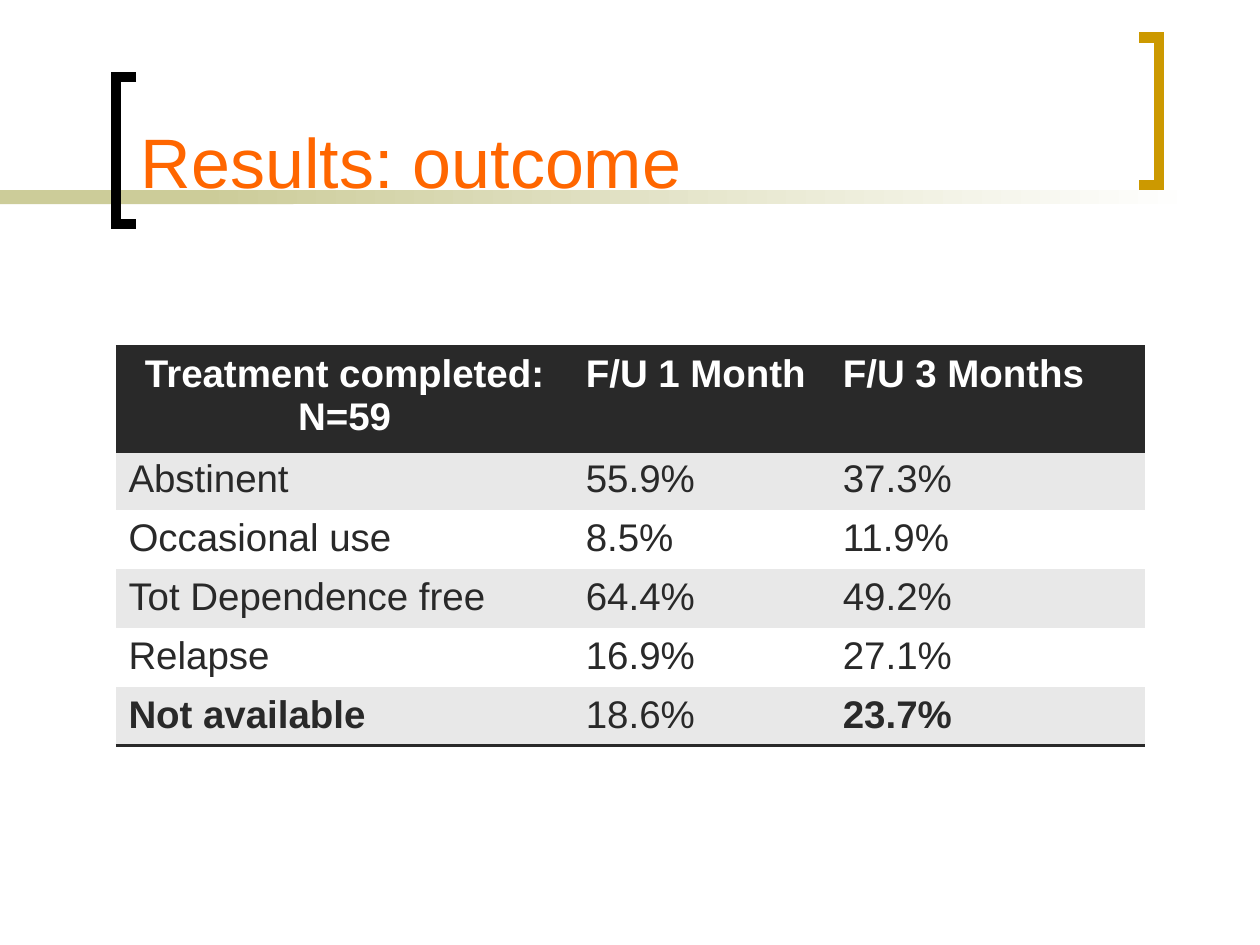
import pptx
import pptx.util
import pptx.dml.color
import pptx.enum.shapes
import pptx.enum.text
import pptx.oxml
import pptx.oxml.ns

Inches = pptx.util.Inches
HUES = {
    "dark": "292929", "pale": "E8E8E8", "white": "FFFFFF", "black": "000000",
    "gold": "CC9900", "sage": "CCCC99", "orange": "FF6600",
}
ROWS = [
    ("Treatment completed: N=59", "F/U 1 Month", "F/U 3 Months"),
    ("Abstinent", "55.9%", "37.3%"),
    ("Occasional use", "8.5%", "11.9%"),
    ("Tot Dependence free", "64.4%", "49.2%"),
    ("Relapse", "16.9%", "27.1%"),
    ("Not available", "18.6%", "23.7%"),
]
STRONG = {"Not available", "23.7%"}
PLAIN = "{2D5ABB26-0587-4C30-8999-92F81FD0307C}"


def rgb(hue):
    return pptx.dml.color.RGBColor.from_string(HUES[hue])


class Deck:
    """Hold the style and the current slide, and draw each kind of element."""

    def __init__(self, wide, high):
        self.show = pptx.Presentation()
        self.show.slide_width, self.show.slide_height = Inches(wide), Inches(high)
        self.slide = self.show.slides.add_slide(self.show.slide_layouts[6])
        self.shapes = self.slide.shapes

    def label(self, frame, text, hue, **form):
        run = frame.paragraphs[0].add_run()
        run.text = text
        run.font.color.rgb = rgb(hue)
        for name, value in {"name": "Arial", **form}.items():
            setattr(run.font, name, value)

    def bar(self, box, hue, fade=None):
        kind = pptx.enum.shapes.MSO_SHAPE.RECTANGLE
        bar = self.shapes.add_shape(kind, *map(Inches, box))
        bar.shadow.inherit = False
        bar.line.fill.background()
        if fade:
            bar.fill.gradient()
            bar.fill.gradient_angle = 0
            for stop, tone in zip(bar.fill.gradient_stops, (hue, fade)):
                stop.color.rgb = rgb(tone)
        else:
            bar.fill.solid()
            bar.fill.fore_color.rgb = rgb(hue)

    def bracket(self, tip, back, top, hue, high=1.17):
        points = [(tip, top), (back, top), (back, top + high), (tip, top + high)]
        points = [(Inches(x), Inches(y)) for x, y in points]
        pen = self.shapes.build_freeform(*points[0])
        pen.add_line_segments(points[1:], close=False)
        mark = pen.convert_to_shape()
        mark.shadow.inherit = False
        mark.fill.background()
        mark.line.color.rgb = rgb(hue)
        mark.line.width = pptx.util.Pt(6)
        join = pptx.oxml.parse_xml(
            f'<a:miter {pptx.oxml.ns.nsdecls("a")} lim="800000"/>')
        mark.line._get_or_add_ln().append(join)

    def title(self, box, text):
        frame = self.shapes.add_textbox(*map(Inches, box)).text_frame
        frame.word_wrap = True
        frame.vertical_anchor = pptx.enum.text.MSO_ANCHOR.BOTTOM
        self.label(frame, text, "orange", size=pptx.util.Pt(40))

    def edge(self, cell, sides):
        for spot, side in enumerate(sides):
            line = pptx.oxml.parse_xml(
                f'<a:ln{side} {pptx.oxml.ns.nsdecls("a")} w="{pptx.util.Pt(2)}">'
                f'<a:solidFill><a:srgbClr val="{HUES["dark"]}"/></a:solidFill>'
                f'</a:ln{side}>')
            cell._tc.get_or_add_tcPr().insert(spot, line)

    def table(self, left, top, wides, high, rows):
        frame = self.shapes.add_table(
            len(rows), len(wides), Inches(left), Inches(top),
            Inches(sum(wides)), Inches(high * len(rows)))
        grid = frame.table
        grid._tbl.tblPr.find(pptx.oxml.ns.qn("a:tableStyleId")).text = PLAIN
        for col, wide in zip(grid.columns, wides):
            col.width = Inches(wide)
        edges = {0: "TB", len(rows) - 1: "B"}
        for r, row in enumerate(rows):
            grid.rows[r].height = Inches(high)
            for c, text in enumerate(row):
                cell = grid.cell(r, c)
                head = r == 0
                cell.fill.solid()
                tone = "dark" if head else ("white", "pale")[r % 2]
                cell.fill.fore_color.rgb = rgb(tone)
                self.edge(cell, edges.get(r, ""))
                self.label(cell.text_frame, text, "white" if head else "dark",
                           size=pptx.util.Pt(22), bold=head or text in STRONG)
        first = grid.cell(0, 0).text_frame.paragraphs[0]
        first.alignment = pptx.enum.text.PP_ALIGN.CENTER


def main():
    deck = Deck(10, 7.5)
    deck.bar((0, 1.51, 2.33, 0.11), "sage")
    deck.bar((1.58, 1.51, 7.92, 0.11), "sage", fade="white")
    deck.bracket(1.08, 0.92, 0.61, "black")
    deck.bracket(9.04, 9.2, 0.3, "gold")
    deck.title((1.02, 0.11, 7.83, 1.55), "Results: outcome")
    deck.table(0.92, 2.75, (3.63, 2.04, 2.5), 0.41, ROWS)
    deck.show.save("out.pptx")


if __name__ == "__main__":
    main()
